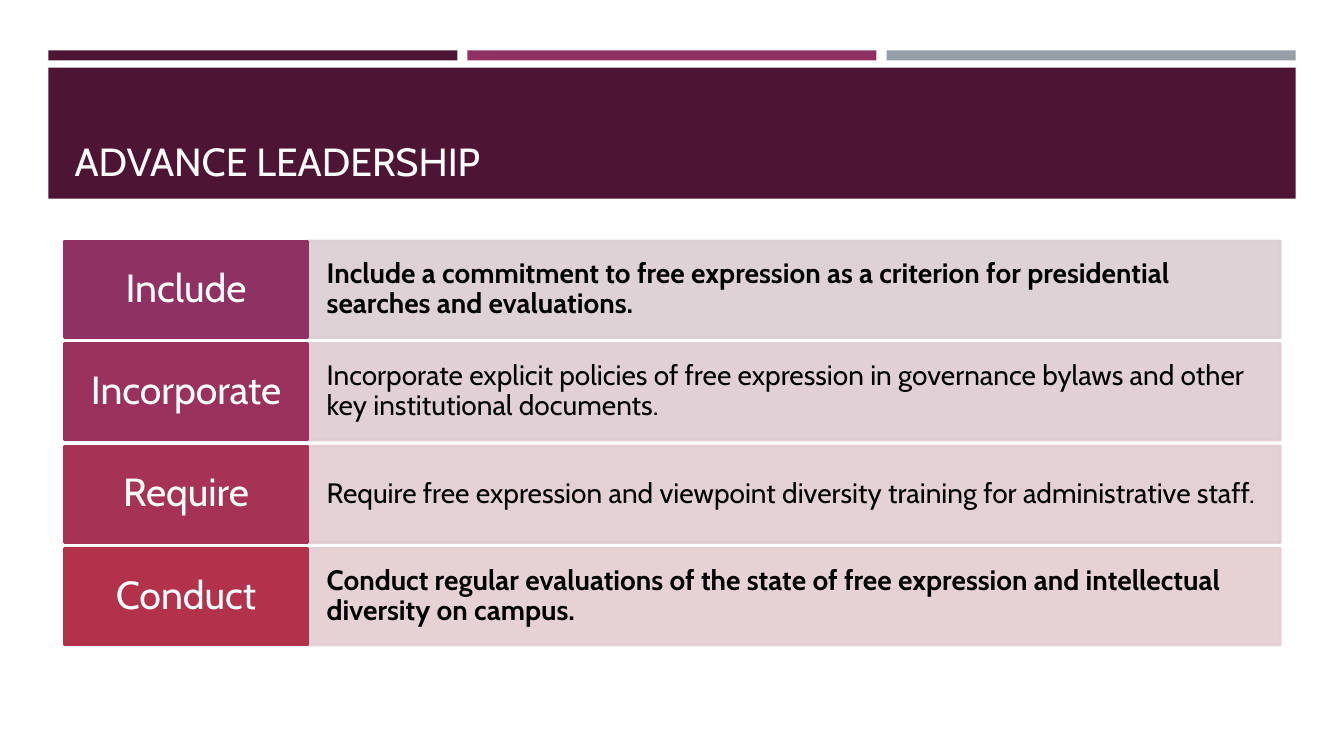
from lxml import etree
from pptx import Presentation
from pptx.dml.color import RGBColor
from pptx.enum.shapes import MSO_SHAPE
from pptx.enum.text import MSO_ANCHOR, MSO_AUTO_SIZE, PP_ALIGN
from pptx.oxml.ns import qn
from pptx.util import Emu, Pt

RECT = MSO_SHAPE.RECTANGLE
LEFT, CENTER = PP_ALIGN.LEFT, PP_ALIGN.CENTER
MIDDLE, BOTTOM = MSO_ANCHOR.MIDDLE, MSO_ANCHOR.BOTTOM
NO_AUTOFIT = MSO_AUTO_SIZE.NONE

FONT = "Cabin"
PLUM = RGBColor(0x4D, 0x14, 0x34)
MAGENTA = RGBColor(0x90, 0x31, 0x63)
GREY = RGBColor(0x96, 0x9F, 0xA7)
OFF_WHITE = RGBColor(0xFF, 0xFE, 0xFF)
WHITE = RGBColor(0xFF, 0xFF, 0xFF)
BLACK = RGBColor(0x00, 0x00, 0x00)

# Label, label colour, sentence, sentence background, bold
ROWS = [
    ("Include", MAGENTA,
     "Include a commitment to free expression as a criterion for "
     "presidential searches and evaluations.",
     RGBColor(0xDB, 0xCE, 0xD3), True),
    ("Incorporate", RGBColor(0x9B, 0x32, 0x5D),
     "Incorporate explicit policies of free expression in governance "
     "bylaws and other key institutional documents.",
     RGBColor(0xDE, 0xCD, 0xD2), False),
    ("Require", RGBColor(0xA6, 0x32, 0x56),
     "Require free expression and viewpoint diversity training for "
     "administrative staff.",
     RGBColor(0xE1, 0xCD, 0xD1), False),
    ("Conduct", RGBColor(0xB2, 0x32, 0x4B),
     "Conduct regular evaluations of the state of free expression and "
     "intellectual diversity on campus.",
     RGBColor(0xE4, 0xCE, 0xD0), True),
]


def px(n):
    """Convert px, at 100 to the inch, to EMU."""
    return Emu(round(n * 9144))


def add_rect(slide, x, y, w, h, color, outline=False, alpha=None):
    sp = slide.shapes.add_shape(RECT, px(x), px(y), px(w), px(h))
    sp.shadow.inherit = False
    sp.fill.solid()
    sp.fill.fore_color.rgb = color
    if outline:
        sp.line.color.rgb = color
        sp.line.width = Pt(1.75)
    else:
        sp.line.fill.background()
    if alpha is not None:
        for clr in sp._element.spPr.iter(qn("a:srgbClr")):
            etree.SubElement(clr, qn("a:alpha"), val=str(alpha * 1000))
    return sp


def set_text(sp, text, size, color, bold=False, align=LEFT, anchor=MIDDLE,
             inset=(10, 5), spacing=0.9):
    tf = sp.text_frame
    tf.word_wrap = True
    tf.auto_size = NO_AUTOFIT
    tf.vertical_anchor = anchor
    tf.margin_left = tf.margin_right = px(inset[0])
    tf.margin_top = tf.margin_bottom = px(inset[1])
    p = tf.paragraphs[0]
    p.alignment = align
    p.line_spacing = spacing
    r = p.add_run()
    r.text = text
    r.font.name = FONT
    r.font.size = Pt(size)
    r.font.bold = bold
    r.font.color.rgb = color


def add_header(slide, x, y, w, h, title):
    # Three accent bars with equal gaps
    gap = 10
    bar_w = (w - 2 * gap) / 3
    for i, color in enumerate((PLUM, MAGENTA, GREY)):
        add_rect(slide, x + i * (bar_w + gap), y, bar_w, 10, color)

    # Title band, with the title placeholder in front of it
    add_rect(slide, x, y + 17, w, h - 17, PLUM)
    sp = slide.shapes.title
    sp.left, sp.top = px(x + 16), px(y + 27)
    sp.width, sp.height = px(w - 31), px(h - 36)
    slide.shapes._spTree.append(sp._element)
    set_text(sp, title, 28, OFF_WHITE, anchor=BOTTOM, spacing=1.0)


def add_action_rows(slide, x, y, w, h, rows):
    label_w, row_h = 241, 96
    pitch = (h - row_h) / (len(rows) - 1)
    for i, (label, color, sentence, tint, bold) in enumerate(rows):
        top = y + i * pitch
        sp = add_rect(slide, x + label_w, top, w - label_w, row_h, tint,
                      outline=True, alpha=90)
        set_text(sp, sentence, 20, BLACK, bold=bold, inset=(19, 24))
        sp = add_rect(slide, x, top, label_w, row_h, color, outline=True)
        set_text(sp, label, 28, WHITE, align=CENTER, inset=(13, 9))


def main():
    prs = Presentation()
    prs.slide_width, prs.slide_height = px(1333), px(750)
    slide = prs.slides.add_slide(prs.slide_layouts[5])
    add_header(slide, 48, 50, 1237, 147, "ADVANCE LEADERSHIP")
    add_action_rows(slide, 64, 239, 1206, 401, ROWS)
    prs.save("out.pptx")


if __name__ == "__main__":
    main()
